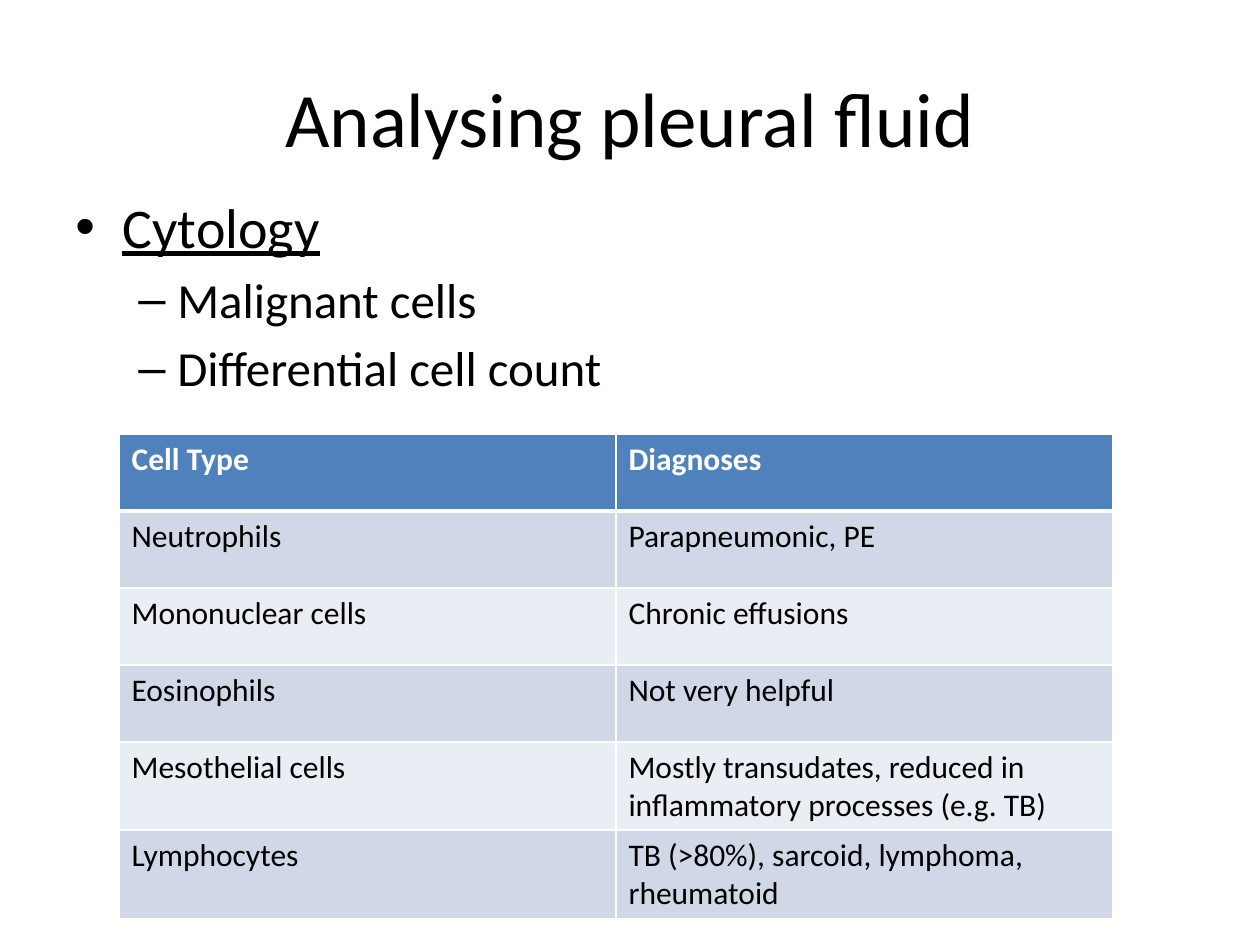
from lxml import etree
from pptx import Presentation
from pptx.dml.color import RGBColor
from pptx.enum.text import MSO_ANCHOR, PP_ALIGN
from pptx.oxml.ns import qn
from pptx.util import Emu, Pt

CENTER, MIDDLE = PP_ALIGN.CENTER, MSO_ANCHOR.MIDDLE
BLACK = RGBColor(0x00, 0x00, 0x00)
WHITE = RGBColor(0xFF, 0xFF, 0xFF)
HEADER_BLUE = RGBColor(0x4F, 0x81, 0xBD)
BANDS = [RGBColor(0xD0, 0xD8, 0xE8), RGBColor(0xE9, 0xED, 0xF4)]
FONT = "Calibri"
PX_PER_INCH = 126

TITLE = "Analysing pleural fluid"
BULLETS = [(0, "Cytology"), (1, "Malignant cells"), (1, "Differential cell count")]
# Per level: bullet, size in pt, left margin and hanging indent in px, underline
LEVELS = [("•", 32, 47, 47, True), ("–", 28, 102, 39, False)]
CELL_TYPES = [
    ("Cell Type", "Diagnoses"),
    ("Neutrophils", "Parapneumonic, PE"),
    ("Mononuclear cells", "Chronic effusions"),
    ("Eosinophils", "Not very helpful"),
    ("Mesothelial cells", "Mostly transudates, reduced in inflammatory processes (e.g. TB)"),
    ("Lymphocytes", "TB (>80%), sarcoid, lymphoma, rheumatoid"),
]
TITLE_AREA = (63, 38, 1134, 157)
BULLET_AREA = (63, 186, 1134, 242)
TABLE_LEFT, TABLE_TOP, COLUMN_WIDTH, ROW_HEIGHT = 119, 434, 497, 77


def px(length):
    return Emu(round(length * 914400 / PX_PER_INCH))


def add_span(para, text, size, color=BLACK, bold=False, underline=False):
    span = para.add_run()
    span.text = text
    font = span.font
    font.name, font.size, font.bold, font.underline = FONT, Pt(size), bold, underline
    font.color.rgb = color


def add_text_box(page, area):
    frame = page.shapes.add_textbox(*map(px, area)).text_frame
    frame.word_wrap = True
    return frame


def add_title(page):
    frame = add_text_box(page, TITLE_AREA)
    frame.vertical_anchor = MIDDLE
    para = frame.paragraphs[0]
    para.alignment = CENTER
    add_span(para, TITLE, 44)


def add_bullets(page):
    frame = add_text_box(page, BULLET_AREA)
    for index, (level, text) in enumerate(BULLETS):
        bullet, size, margin, hanging, underline = LEVELS[level]
        para = frame.add_paragraph() if index else frame.paragraphs[0]
        para.level = level
        para.space_before = Pt(size * 0.2)
        props = para._p.get_or_add_pPr()
        props.set("marL", str(px(margin)))
        props.set("indent", str(-px(hanging)))
        etree.SubElement(props, qn("a:buFont"), typeface="Arial")
        etree.SubElement(props, qn("a:buChar"), char=bullet)
        add_span(para, text, size, underline=underline)


def set_borders(cell, bottom):
    """Draw white cell edges; the widths are in points."""
    props = cell._tc.get_or_add_tcPr()
    widths = {"a:lnL": 1, "a:lnR": 1, "a:lnT": 1, "a:lnB": bottom}
    for place, (tag, width) in enumerate(widths.items()):
        line = etree.Element(qn(tag), w=str(Pt(width)))
        fill = etree.SubElement(line, qn("a:solidFill"))
        etree.SubElement(fill, qn("a:srgbClr"), val=str(WHITE))
        props.insert(place, line)


def add_cell_table(page):
    rows, columns = len(CELL_TYPES), len(CELL_TYPES[0])
    table = page.shapes.add_table(
        rows, columns, px(TABLE_LEFT), px(TABLE_TOP),
        px(columns * COLUMN_WIDTH), px(rows * ROW_HEIGHT)).table
    for row, texts in enumerate(CELL_TYPES):
        header = row == 0
        for column, text in enumerate(texts):
            cell = table.cell(row, column)
            cell.fill.solid()
            cell.fill.fore_color.rgb = HEADER_BLUE if header else BANDS[(row - 1) % 2]
            set_borders(cell, bottom=3 if header else 1)
            add_span(cell.text_frame.paragraphs[0], text, 18,
                     WHITE if header else BLACK, bold=header)


def main():
    deck = Presentation()
    deck.slide_width, deck.slide_height = px(1260), px(945)
    page = deck.slides.add_slide(deck.slide_layouts[6])
    add_title(page)
    add_bullets(page)
    add_cell_table(page)
    deck.save("out.pptx")


if __name__ == "__main__":
    main()
